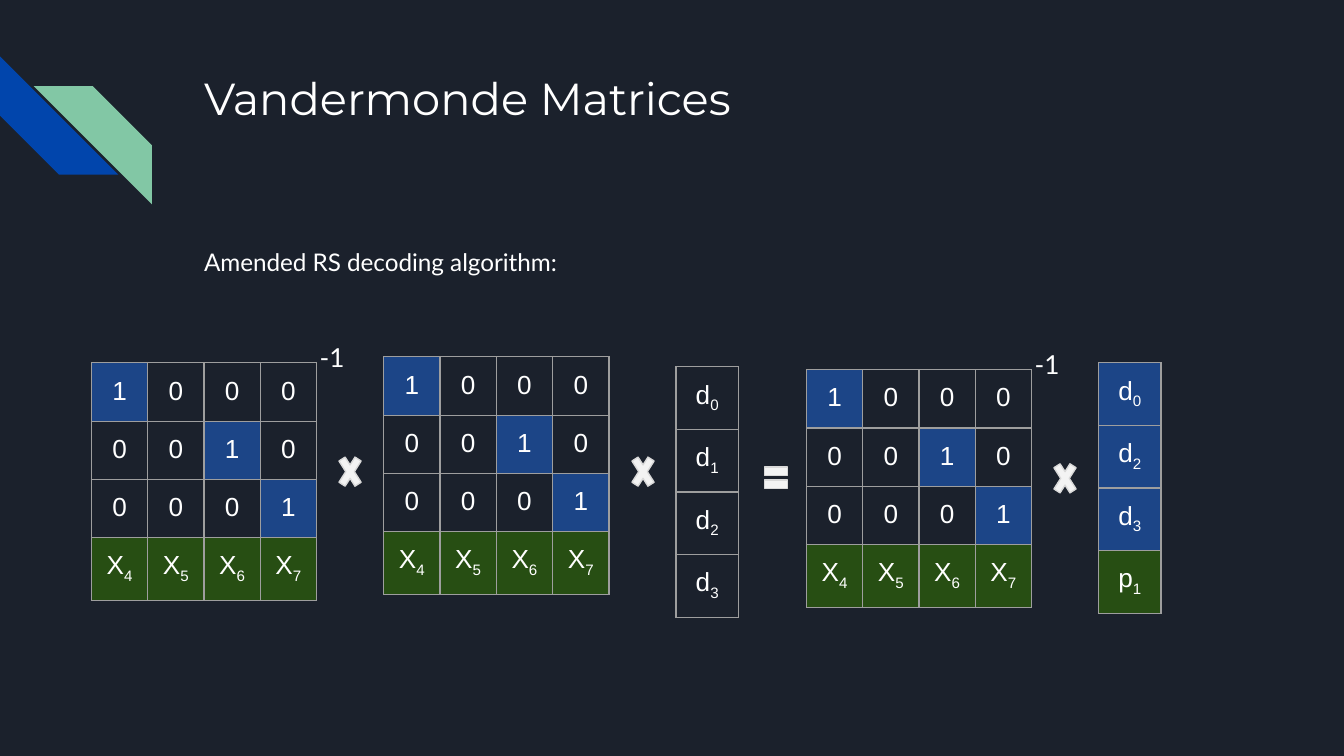
from lxml import etree
from pptx import Presentation, util as u
from pptx.dml.color import RGBColor
from pptx.enum import shapes, text
from pptx.oxml import ns

WHITE, BLUE, GREEN, GREY = "FFFFFF", "1C4587", "274E13", "9E9E9E"
FILLS = {"1": BLUE, "X": GREEN, "p": GREEN}
PLAIN = "{2D5ABB26-0587-4C30-8999-92F81FD0307C}"  # table style without grid


def hue(code):
    return RGBColor.from_string(code)


def write(frame, words, sub="", font="Lato", size=14, align=None, space=None, after=None):
    """Fill a text frame with words and an optional subscript."""
    frame.word_wrap = True
    line = frame.paragraphs[0]
    line.alignment, line.line_spacing = align, space
    if after:
        line.space_after = u.Pt(after)
    for part, base in ((words, 0), (sub, -25000)):
        if part:
            run = line.add_run()
            run.text = part
            run.font.name, run.font.size = font, u.Pt(size)
            run.font.color.rgb = hue(WHITE)
            if base:
                run.font._element.set("baseline", str(base))


# The slide is a grid of 100 columns by 56.25 rows of square units.
deck = Presentation()
unit = u.Inches(0.1)
deck.slide_width, deck.slide_height = 100 * unit, int(56.25 * unit)
slide = deck.slides.add_slide(deck.slide_layouts[6])
slide.background.fill.solid()
slide.background.fill.fore_color.rgb = hue("1B212C")

# Corner stripes and the signs between the matrices
kind = shapes.MSO_SHAPE
stripe, times, equal = kind.DIAGONAL_STRIPE, kind.MATH_MULTIPLY, kind.MATH_EQUAL
marks = [
    (stripe, 0, 4.2, 8.8, 8.8, "0145AC"),
    (stripe, 2.5, 6.4, 8.8, 8.8, "82C7A5"),
    (times, 24.9, 33.3, 2.3, 3.6, "F3F3F3"),
    (times, 46.7, 33.3, 2.3, 3.6, "F3F3F3"),
    (equal, 56.6, 34.2, 2.3, 2.7, "F3F3F3"),
    (times, 78.1, 33.8, 2.3, 3.6, "F3F3F3"),
]
for form, *spot, tint in marks:
    mark = slide.shapes.add_shape(form, *[int(n * unit) for n in spot])
    mark.shadow.inherit = False
    mark.fill.solid()
    mark.fill.fore_color.rgb = hue(tint)
    if form == stripe:
        mark.line.fill.background()
        mark.adjustments[0] = 0.5
        if spot[0] == 0:
            mark.rotation = 270
        else:
            mark._element.spPr.xfrm.set("flipH", "1")
    else:
        mark.line.color.rgb = hue("D9D9D9")
        mark.line.width = u.Pt(0.75)
        mark.adjustments[0] = 0.235
        if form == equal:
            mark.adjustments[1] = 0.118

# Title, lead-in and the two inverse exponents
notes = [
    ("Vandermonde Matrices", 14.2, 4.3, 77, 10, dict(font="Montserrat", size=24)),
    ("Amended RS decoding algorithm:", 14.2, 17.1, 77, 5, dict(size=13, space=1.15, after=16)),
    ("-1", 22.8, 24.4, 6.6, 5.6, {}),
    ("-1", 76, 24.9, 6.6, 5.6, {}),
]
for words, *spot, style in notes:
    box = slide.shapes.add_textbox(*[int(n * unit) for n in spot]).text_frame
    box.margin_left = box.margin_right = box.margin_top = box.margin_bottom = unit
    write(box, words, **style)

# Matrices and vectors: left, top, column width, row height, rows of cells
matrix = ["1 0 0 0", "0 0 1 0", "0 0 0 1", "X4 X5 X6 X7"]
data = ["d0", "d1", "d2", "d3"]
known = ["d0", "d2", "d3", "p1"]
tables = [
    (6.8, 27, 4.19, 3.1, matrix),
    (28.55, 26.55, 4.19, 3.1, matrix),
    (50.3, 27.3, 4.64, 3.2, data),
    (60, 27.5, 4.19, 3.1, matrix),
    (81.75, 27, 4.64, 3.2, known),
]
for left, top, wide, high, lines in tables:
    rows = [line.split() for line in lines]
    spot = left, top, 32.8, 32.8
    frame = slide.shapes.add_table(len(rows), len(rows[0]), *[int(n * unit) for n in spot])
    grid = frame.table
    grid.first_row = grid.horz_banding = False
    grid._tbl.tblPr.find(ns.qn("a:tableStyleId")).text = PLAIN
    for col in grid.columns:
        col.width = int(wide * unit)
    for r, row in enumerate(rows):
        grid.rows[r].height = int(high * unit)
        for c, term in enumerate(row):
            cell = grid.cell(r, c)
            cell.margin_left = cell.margin_right = unit
            cell.margin_top = cell.margin_bottom = unit
            write(cell.text_frame, term[0], term[1:], font="Arial", align=text.PP_ALIGN.CENTER)
            props = cell._tc.get_or_add_tcPr()
            for side in "LRTB":
                edge = etree.SubElement(props, ns.qn("a:ln" + side), w=str(u.Pt(0.75)))
                solid = etree.SubElement(edge, ns.qn("a:solidFill"))
                etree.SubElement(solid, ns.qn("a:srgbClr"), val=GREY)
            tint = BLUE if lines is known and term[0] == "d" else FILLS.get(term[0])
            if tint:
                cell.fill.solid()
                cell.fill.fore_color.rgb = hue(tint)
            else:
                cell.fill.background()
    frame.width = frame.height = int(32.8 * unit)

deck.save("out.pptx")
